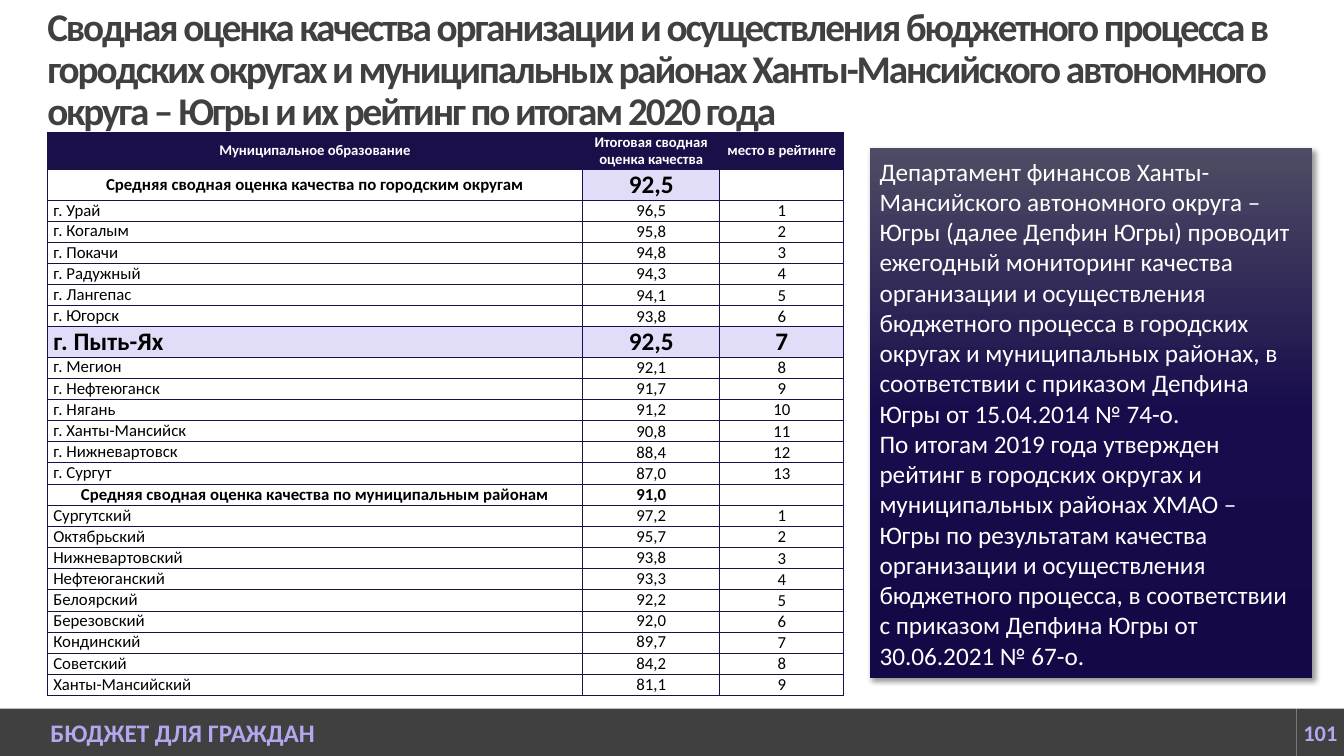
from copy import deepcopy

from pptx import Presentation
from pptx.dml.color import RGBColor
from pptx.enum.shapes import MSO_SHAPE
from pptx.enum.text import MSO_ANCHOR, MSO_AUTO_SIZE, PP_ALIGN
from pptx.oxml import parse_xml
from pptx.oxml.ns import nsdecls, qn
from pptx.util import Inches, Pt

GRAY = RGBColor(0x40, 0x40, 0x40)
LILAC = RGBColor(0xB5, 0xA7, 0xED)
PALE = RGBColor(0xE1, 0xDC, 0xF8)
NAVY = RGBColor(0x1A, 0x0F, 0x49)
WHITE = RGBColor(0xFF, 0xFF, 0xFF)
BLACK = RGBColor(0x00, 0x00, 0x00)
PANEL_STOPS = [(0, RGBColor(0x4E, 0x4C, 0x64)), (0.5, RGBColor(0x18, 0x0C, 0x4C)),
               (1, RGBColor(0x14, 0x08, 0x46))]

WIDTH, HEIGHT = 13.33, 7.5
UNIT = HEIGHT / 16  # side of a square grid cell, in inches
COLS = WIDTH / UNIT

TITLE = ("Сводная оценка качества организации и осуществления бюджетного процесса "
         "в городских округах и муниципальных районах Ханты-Мансийского автономного "
         "округа – Югры и их рейтинг по итогам 2020 года")
HEADER = ("Муниципальное образование", "Итоговая сводная оценка качества", "место в рейтинге")
CITY_MEAN = ("Средняя сводная оценка качества по городским округам", "92,5", "")
CITIES = [("Урай", "96,5"), ("Когалым", "95,8"), ("Покачи", "94,8"), ("Радужный", "94,3"),
          ("Лангепас", "94,1"), ("Югорск", "93,8"), ("Пыть-Ях", "92,5"), ("Мегион", "92,1"),
          ("Нефтеюганск", "91,7"), ("Нягань", "91,2"), ("Ханты-Мансийск", "90,8"),
          ("Нижневартовск", "88,4"), ("Сургут", "87,0")]
FOCUS = "г. Пыть-Ях"
DISTRICT_MEAN = ("Средняя сводная оценка качества по муниципальным районам", "91,0", "")
DISTRICTS = [("Сургутский", "97,2"), ("Октябрьский", "95,7"), ("Нижневартовский", "93,8"),
             ("Нефтеюганский", "93,3"), ("Белоярский", "92,2"), ("Березовский", "92,0"),
             ("Кондинский", "89,7"), ("Советский", "84,2"), ("Ханты-Мансийский", "81,1")]
PANEL = [
    "Департамент финансов Ханты-Мансийского автономного округа – Югры (далее Депфин Югры) "
    "проводит ежегодный мониторинг качества организации и осуществления бюджетного процесса "
    "в городских округах и муниципальных районах, в соответствии с приказом Депфина Югры "
    "от 15.04.2014 № 74-о.",
    "По итогам 2019 года утвержден рейтинг в городских округах и муниципальных районах "
    "ХМАО – Югры по результатам качества организации и осуществления бюджетного процесса, "
    "в соответствии с приказом Депфина Югры от 30.06.2021 № 67-о.",
]


class Deck:
    """Current slide and its style; positions are in grid units."""
    font = "Calibri"

    def __init__(self):
        self.prs = Presentation()
        self.prs.slide_width, self.prs.slide_height = Inches(WIDTH), Inches(HEIGHT)
        self.s = self.prs.slides.add_slide(self.prs.slide_layouts[6])

    def box(self, *units):
        return [Inches(u * UNIT) for u in units]

    def style(self, p, size, color, bold=False, align=PP_ALIGN.LEFT):
        p.alignment = align
        p.font.name, p.font.size, p.font.bold = self.font, Pt(size), bold
        p.font.color.rgb = color

    def flat_frame(self, tf):
        tf.word_wrap = True
        tf.vertical_anchor = MSO_ANCHOR.MIDDLE
        tf.margin_left = tf.margin_right = tf.margin_top = tf.margin_bottom = 0

    def title(self, text, *at):
        tf = self.s.shapes.add_textbox(*self.box(*at)).text_frame
        self.flat_frame(tf)
        p = tf.paragraphs[0]
        r = p.add_run()
        r.text = text
        r.font._element.set("spc", "-150")
        p.line_spacing = 0.9
        self.style(p, 28, GRAY, True)

    def rect(self, *at):
        sp = self.s.shapes.add_shape(MSO_SHAPE.RECTANGLE, *self.box(*at))
        sp.shadow.inherit = False
        sp.line.fill.background()
        return sp

    def footer(self, text, size, align, indent, *at):
        sp = self.rect(*at)
        sp.fill.solid()
        sp.fill.fore_color.rgb = GRAY
        tf = sp.text_frame
        self.flat_frame(tf)
        p = tf.paragraphs[0]
        p.text = text
        self.style(p, size, LILAC, True, align)
        p._p.get_or_add_pPr().set("marL", str(Inches(indent)))

    def panel(self, texts, *at):
        sp = self.rect(*at)
        sp.fill.gradient()
        sp.fill.gradient_angle = 270
        stops = sp._element.spPr.find(".//" + qn("a:gsLst"))
        stops.append(deepcopy(stops[-1]))
        for stop, (position, color) in zip(sp.fill.gradient_stops, PANEL_STOPS):
            stop.position, stop.color.rgb = position, color
        sp._element.spPr.find(qn("a:effectLst")).append(parse_xml(
            f'<a:outerShdw {nsdecls("a")} blurRad="{Pt(4)}" dist="{Pt(3)}" dir="2700000" '
            'algn="tl" rotWithShape="0"><a:srgbClr val="000000"><a:alpha val="40000"/>'
            '</a:srgbClr></a:outerShdw>'))
        tf = sp.text_frame
        tf.word_wrap = True
        tf.auto_size = MSO_AUTO_SIZE.SHAPE_TO_FIT_TEXT
        for i, text in enumerate(texts):
            p = tf.add_paragraph() if i else tf.paragraphs[0]
            p.text = text
            self.style(p, 18, WHITE)

    def cell(self, cell, text, size, color, bold, align, anchor, fill):
        cell.margin_left = cell.margin_right = Inches(0.06)
        cell.margin_top = cell.margin_bottom = 0
        cell.vertical_anchor = anchor
        p = cell.text_frame.paragraphs[0]
        p.text = text
        self.style(p, size, color, bold, align)
        if not text:
            p._p.get_or_add_endParaRPr().set("sz", str(size * 100))
        tcPr = cell._tc.get_or_add_tcPr()
        for side in ("lnL", "lnR", "lnT", "lnB"):
            tcPr.append(parse_xml(
                f'<a:{side} {nsdecls("a")} w="{Pt(0.5)}"><a:solidFill>'
                f'<a:srgbClr val="{NAVY}"/></a:solidFill></a:{side}>'))
        cell.fill.solid()
        cell.fill.fore_color.rgb = fill

    def table(self, rows, widths, heights, left, top):
        shape = self.s.shapes.add_table(len(rows), len(widths), *self.box(left, top),
                                        Inches(sum(widths)), Inches(sum(heights)))
        tbl = shape.table
        tbl.first_row = tbl.horz_banding = False
        for column, width in zip(tbl.columns, widths):
            column.width = Inches(width)
        district_start = rows.index(DISTRICT_MEAN)
        for i, (row, height) in enumerate(zip(rows, heights)):
            tbl.rows[i].height = Inches(height)
            header, focus = row == HEADER, row[0] == FOCUS
            heading = header or row in (CITY_MEAN, DISTRICT_MEAN)
            for j, text in enumerate(row):
                big = focus or (row == CITY_MEAN and j == 1)
                if heading or (i == 2 and j < 2):
                    anchor = MSO_ANCHOR.MIDDLE
                elif j == 0 or (j == 1 and i > district_start):
                    anchor = MSO_ANCHOR.TOP
                else:
                    anchor = MSO_ANCHOR.BOTTOM
                self.cell(tbl.cell(i, j), text,
                          size=10.5 if header else 18 if big else 12,
                          color=WHITE if header else BLACK, bold=heading or focus,
                          align=PP_ALIGN.CENTER if heading or j else PP_ALIGN.LEFT,
                          anchor=anchor, fill=NAVY if header else PALE if big else WHITE)


def ranked(scores, prefix=""):
    return [(prefix + name, score, str(place))
            for place, (name, score) in enumerate(scores, 1)]


def main():
    deck = Deck()
    deck.footer("БЮДЖЕТ ДЛЯ ГРАЖДАН", 18, PP_ALIGN.LEFT, 0.5, 0, 15, COLS - 1, 1)
    deck.footer("101", 16, PP_ALIGN.CENTER, 0, COLS - 1, 15, 1, 1)
    deck.title(TITLE, 1, 1, COLS - 2, 1)
    rows = [HEADER, CITY_MEAN, *ranked(CITIES, "г. "), DISTRICT_MEAN, *ranked(DISTRICTS)]
    special = {HEADER[0]: 0.37, CITY_MEAN[0]: 0.3, FOCUS: 0.3}
    heights = [special.get(row[0], 0.21) for row in rows]
    deck.table(rows, (5.31, 1.36, 1.23), heights, 1, 2.8)
    deck.panel(PANEL, 18.4, 3.14, 9.36, 11.2)
    deck.prs.save("out.pptx")


if __name__ == "__main__":
    main()
